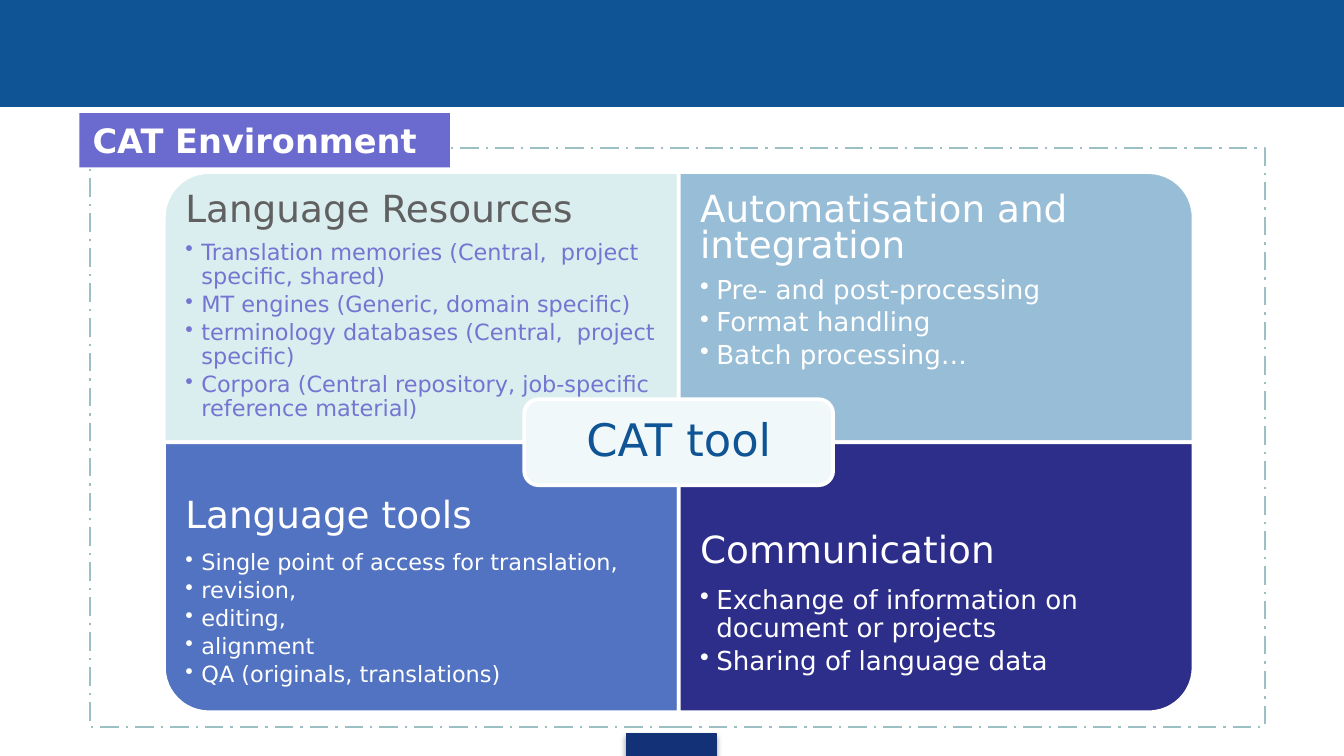
import pptx
import pptx.util
import pptx.dml.color
import pptx.enum.dml
import pptx.enum.shapes
import pptx.enum.text
import pptx.oxml
import pptx.oxml.ns

Pt = pptx.util.Pt
KIND = pptx.enum.shapes.MSO_SHAPE
ANCHOR = pptx.enum.text.MSO_ANCHOR
FONT = "DejaVu Sans"
WHITE, BLUE = "FFFFFF", "0F5494"

# Quadrants in reading order: turn is the rotation of the one-corner rectangle.
QUADS = [
    dict(turn=270, fill="DAEDEF", head="Language Resources", ink="606060",
         lead=0.8, gap=6, size=12, color="7575D1", items=[
             "Translation memories (Central,  project specific, shared)",
             "MT engines (Generic, domain specific)",
             "terminology databases (Central,  project specific)",
             "Corpora (Central repository, job-specific reference material)"]),
    dict(turn=0, fill="98BDD6", head="Automatisation and integration", ink=WHITE,
         lead=0.8, gap=6, size=14, color=WHITE, items=[
             "Pre- and post-processing", "Format handling", "Batch processing…"]),
    dict(turn=180, fill="5273C1", head="Language tools", ink=WHITE,
         lead=0.9, gap=8, size=12, color=WHITE, anchor=ANCHOR.MIDDLE, foot=32,
         items=["Single point of access for translation,", "revision,",
                "editing,", "alignment", "QA (originals, translations)"]),
    dict(turn=90, fill="2D2D8A", head="Communication", ink=WHITE,
         lead=0.9, gap=8, size=14, color=WHITE, items=[
             "Exchange of information on document or projects",
             "Sharing of language data"]),
]
LEFT, TOP, WIDE, HIGH = 87.8, 92.2, 275.8, 144.7
PAD, DENT = 11.5, 8.64

deck = pptx.Presentation()
deck.slide_width, deck.slide_height = Pt(720), Pt(405)
slide = deck.slides.add_slide(deck.slide_layouts[6])


def rgb(code):
    return pptx.dml.color.RGBColor.from_string(code)


def block(kind, x, y, w, h, fill=None, line=None, width=0.75):
    shape = slide.shapes.add_shape(kind, Pt(x), Pt(y), Pt(w), Pt(h))
    shape.shadow.inherit = False
    if fill:
        shape.fill.solid()
        shape.fill.fore_color.rgb = rgb(fill)
    else:
        shape.fill.background()
    if line:
        shape.line.color.rgb = rgb(line)
        shape.line.width = Pt(width)
    else:
        shape.line.fill.background()
    return shape


def label(x, y, w, h, pad, anchor=ANCHOR.TOP, foot=None):
    """Add an empty text box; foot is the bottom inset if it differs."""
    frame = slide.shapes.add_textbox(Pt(x), Pt(y), Pt(w), Pt(h)).text_frame
    frame.word_wrap = True
    frame.vertical_anchor = anchor
    frame.margin_left = frame.margin_right = frame.margin_top = Pt(pad)
    frame.margin_bottom = Pt(foot or pad)
    return frame


def style(para, size, color, lead=None, gap=None, bold=False):
    para.line_spacing = lead
    para.space_after = None if gap is None else Pt(gap)
    for run in para.runs:
        font = run.font
        font.name, font.size, font.bold = FONT, Pt(size), bold
        font.color.rgb = rgb(color)


def bullet(para):
    para.level = 1
    props = para._p.get_or_add_pPr()
    props.set("marL", str(Pt(DENT)))
    props.set("indent", str(-Pt(DENT)))
    mark = pptx.oxml.parse_xml(
        f'<a:buChar {pptx.oxml.ns.nsdecls("a")} char="•"/>')
    props.append(mark)


def quad(index, data):
    row, col = divmod(index, 2)
    x, y = LEFT + col * WIDE, TOP + row * HIGH
    w, h = (HIGH, WIDE) if data["turn"] % 180 else (WIDE, HIGH)
    shape = block(KIND.ROUND_1_RECTANGLE, x + (WIDE - w) / 2,
                  y + (HIGH - h) / 2, w, h, data["fill"], WHITE, 2)
    shape.rotation = data["turn"]
    frame = label(x, y + row * HIGH / 4, WIDE, HIGH * 0.75, PAD,
                  data.get("anchor", ANCHOR.TOP), data.get("foot"))
    frame.text = "\n".join([data["head"]] + data["items"])
    head, *items = frame.paragraphs
    style(head, 20, data["ink"], data["lead"], data["gap"])
    for para in items:
        bullet(para)
        style(para, data["size"], data["color"], 0.9, data["size"] * 0.175)


block(KIND.RECTANGLE, 0, 0, 720, 56.9, BLUE, BLUE)
tab = block(KIND.RECTANGLE, 335.5, 393, 48.2, 12, "133176", "133176")
shade = pptx.oxml.parse_xml(
    f'<a:outerShdw {pptx.oxml.ns.nsdecls("a")} blurRad="{Pt(3.1)}" '
    f'dist="{Pt(1.8)}" dir="5400000" rotWithShape="0">'
    '<a:srgbClr val="000000"><a:alpha val="35000"/></a:srgbClr></a:outerShdw>')
tab._element.spPr.find(pptx.oxml.ns.qn("a:effectLst")).append(shade)

for index, data in enumerate(QUADS):
    quad(index, data)

# The hub sits where the four quadrants meet.
w, h, rim = WIDE * 0.6, 46, 2.2
x, y = LEFT + WIDE - w / 2, TOP + HIGH - h / 2
block(KIND.ROUNDED_RECTANGLE, x, y, w, h, "F1F8F9", WHITE, 2)
hub = label(x + rim, y + rim, w - 2 * rim, h - 2 * rim, 7.2, ANCHOR.MIDDLE)
hub.text = "CAT tool"
hub.paragraphs[0].alignment = pptx.enum.text.PP_ALIGN.CENTER
style(hub.paragraphs[0], 24, BLUE, 0.9, 8)

border = block(KIND.RECTANGLE, 48.3, 79.3, 629.3, 310.2, None, "9BBFC2", 1.25)
border.line.dash_style = pptx.enum.dml.MSO_LINE.LONG_DASH_DOT

title = block(KIND.RECTANGLE, 42.5, 60.6, 198.5, 29.1, "6B6BCF")
frame = title.text_frame
frame.text = "CAT Environment"
frame.word_wrap = True
frame.auto_size = pptx.enum.text.MSO_AUTO_SIZE.SHAPE_TO_FIT_TEXT
frame.vertical_anchor = ANCHOR.TOP
frame.paragraphs[0].alignment = pptx.enum.text.PP_ALIGN.LEFT
style(frame.paragraphs[0], 18, WHITE, bold=True)

deck.save("out.pptx")
